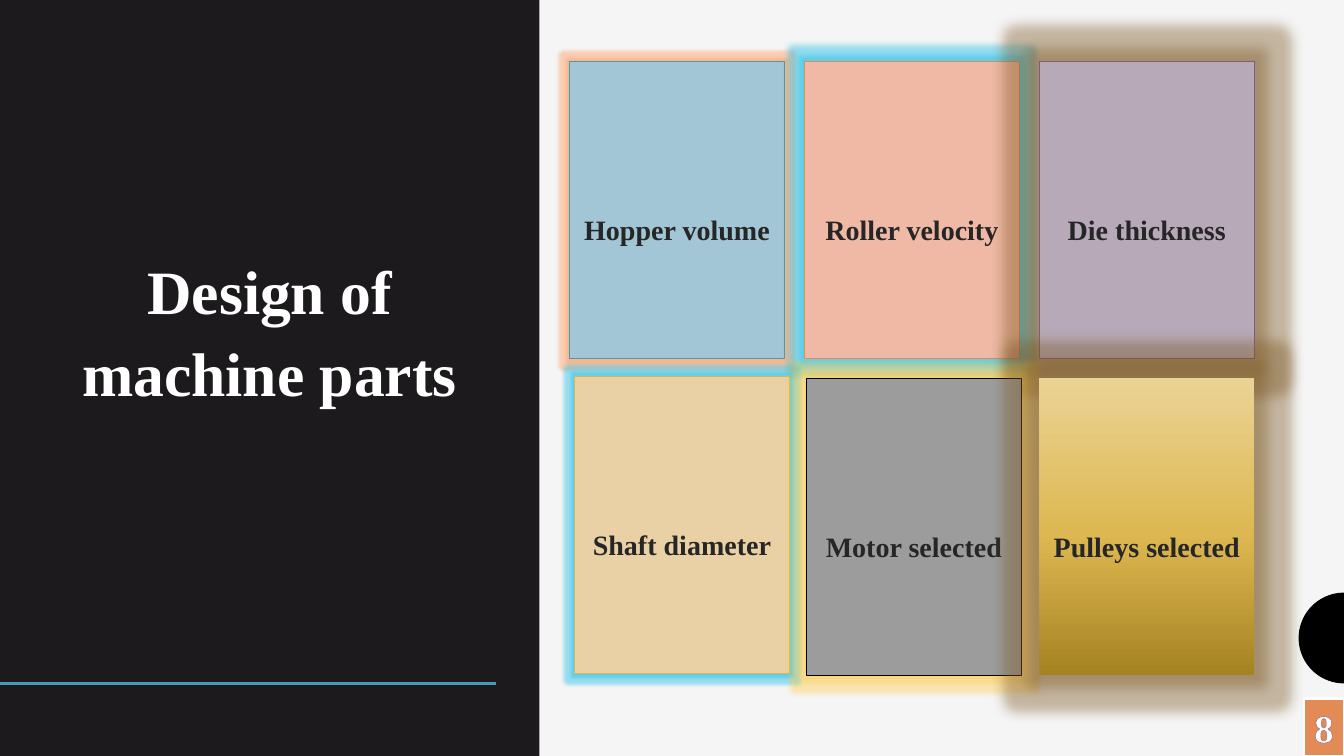
import math
from dataclasses import dataclass

from lxml import etree
from pptx import Presentation
from pptx import util as u
from pptx.dml.color import RGBColor
from pptx.enum import shapes as sh, text as tx
from pptx.oxml.ns import qn


@dataclass(frozen=True)
class Theme:
    font: str = "Times New Roman"
    back: str = "F5F5F5"
    dark: str = "1D1A1D"
    white: str = "FFFFFF"
    black: str = "000000"
    ink: str = "262626"
    teal: str = "439EB7"
    coral: str = "E28B55"
    plum: str = "835B82"
    gold: str = "DCB64D"
    title: int = 44
    label: int = 20
    page: int = 28


T = Theme()

# Label, fill (a list is a gradient), outline, glow colour, glow points, shift
TILES = [
    ("Hopper volume", "A2C6D5", T.teal, "FF9150", 5, (0, 0)),
    ("Roller velocity", "EFB9A5", T.coral, "0CB9E6", 8, (0, 0)),
    ("Die thickness", "B7A9B8", T.plum, "7A5520", 18, (0, 0)),
    ("Shaft diameter", "E9D1A5", T.gold, "0CB9E6", 5, (0.05, -0.02)),
    ("Motor selected", "9C9C9C", T.black, "FFC83C", 8, (0.02, 0)),
    ("Pulleys selected", [(0, "A68321"), (48, "DDB852"), (100, "EAD394")],
     None, "7A5520", 18, (0, 0)),
]


def rgb(code):
    return RGBColor.from_string(code)


def add(parent, tag, **attrs):
    return etree.SubElement(parent, qn(tag), attrs)


def paint(shape, fill, line=None, width=0.5):
    """Give a shape its fill and outline, without a shadow."""
    shape.shadow.inherit = False
    if isinstance(fill, list):
        shape.fill.gradient()
        shape.fill.gradient_angle = 90
        stops = shape._element.spPr.find(".//" + qn("a:gsLst"))
        for stop in list(stops):
            stops.remove(stop)
        for pos, code in fill:
            stop = add(stops, "a:gs", pos=str(pos * 1000))
            add(stop, "a:srgbClr", val=code)
    else:
        shape.fill.solid()
        shape.fill.fore_color.rgb = rgb(fill)
    if line:
        shape.line.color.rgb = rgb(line)
        shape.line.width = u.Pt(width)
    else:
        shape.line.fill.background()


def block(slide, box, fill, line=None, width=0.5):
    shape = slide.shapes.add_shape(
        sh.MSO_SHAPE.RECTANGLE, *map(u.Inches, box))
    paint(shape, fill, line, width)
    return shape


def glow(shape, code, size):
    fx = shape._element.spPr.find(qn("a:effectLst"))
    halo = add(fx, "a:glow", rad=str(u.Pt(size)))
    add(add(halo, "a:srgbClr", val=code), "a:alpha", val="40000")


def write(frame, words, size, color, anchor, spaced=True):
    frame.vertical_anchor = anchor
    para = frame.paragraphs[0]
    para.text = words
    para.alignment = tx.PP_ALIGN.CENTER
    if spaced:
        para.line_spacing = 1.12
        para.space_before = u.Pt(9)
    font = para.font
    font.name, font.size, font.bold = T.font, u.Pt(size), True
    font.color.rgb = rgb(color)
    return para


def panel(slide, box):
    """Dark side panel with the title and a rule below it."""
    left, top, wide, high = box
    block(slide, box, T.dark)
    rule = slide.shapes.add_connector(
        sh.MSO_CONNECTOR.STRAIGHT, u.Inches(left), u.Inches(top + 6.78),
        u.Inches(left + 4.92), u.Inches(top + 6.78))
    rule.line.color.rgb = rgb(T.teal)
    rule.line.width = u.Pt(2)
    add(rule._element.spPr, "a:effectLst")
    title = slide.shapes.add_textbox(
        u.Inches(left + 0.58), u.Inches(top + 1.68),
        u.Inches(wide - 1.16), u.Inches(2.43))
    title.text_frame.word_wrap = True
    write(title.text_frame, "Design of machine parts", T.title, T.white,
          tx.MSO_ANCHOR.BOTTOM)


def tile(slide, box, name, fill, line, halo, size):
    shape = block(slide, box, fill, line)
    glow(shape, halo, size)
    frame = shape.text_frame
    frame.word_wrap = True
    frame.margin_left = frame.margin_right = frame.margin_bottom = 0
    frame.margin_top = u.Inches(1.46)
    write(frame, name, T.label, T.ink, tx.MSO_ANCHOR.TOP)


def grid(slide, box, cols=3):
    """Tiles in rows of three, spread over the box."""
    left, top, wide, high = box
    w, h = 2.13, 2.95
    for i, (name, fill, line, halo, size, (dx, dy)) in enumerate(TILES):
        row, col = divmod(i, cols)
        x = left + col * (wide - w) / (cols - 1) + dx
        y = top + row * (high - h) + dy
        tile(slide, (x, y, w, h), name, fill, line, halo, size)


def corner(slide, box):
    """Half disc at the slide edge, above the page number."""
    left, top, wide, high = box
    rad, steps = 0.45, 48
    mid = top + rad
    arc = [(left + wide - rad * math.sin(math.pi * k / steps),
            mid - rad * math.cos(math.pi * k / steps))
           for k in range(steps + 1)]
    pen = slide.shapes.build_freeform(
        *map(u.Inches, arc[0]), scale=1.0)
    pen.add_line_segments([tuple(map(u.Inches, p)) for p in arc[1:]])
    paint(pen.convert_to_shape(), T.black)

    tab = block(slide, (left + 0.05, top + high - 0.57, 0.4, 0.57),
                T.coral, T.white, 1.5)
    tab.text_frame.word_wrap = False
    para = write(tab.text_frame, "8", T.page, T.white,
                 tx.MSO_ANCHOR.TOP, spaced=False)
    # Thin outline around the digit
    props = para.runs[0]._r.get_or_add_rPr()
    edge = add(props, "a:ln", w=str(u.Pt(0.8)))
    add(add(edge, "a:solidFill"), "a:srgbClr", val=T.plum)


def main():
    deck = Presentation()
    deck.slide_width, deck.slide_height = u.Inches(13.33), u.Inches(7.5)
    slide = deck.slides.add_slide(deck.slide_layouts[6])
    slide.background.fill.solid()
    slide.background.fill.fore_color.rgb = rgb(T.back)
    panel(slide, (0, 0, 5.35, 7.5))
    grid(slide, (5.65, 0.61, 6.79, 6.09))
    corner(slide, (12.88, 5.88, 0.45, 1.62))
    deck.save("out.pptx")


if __name__ == "__main__":
    main()
